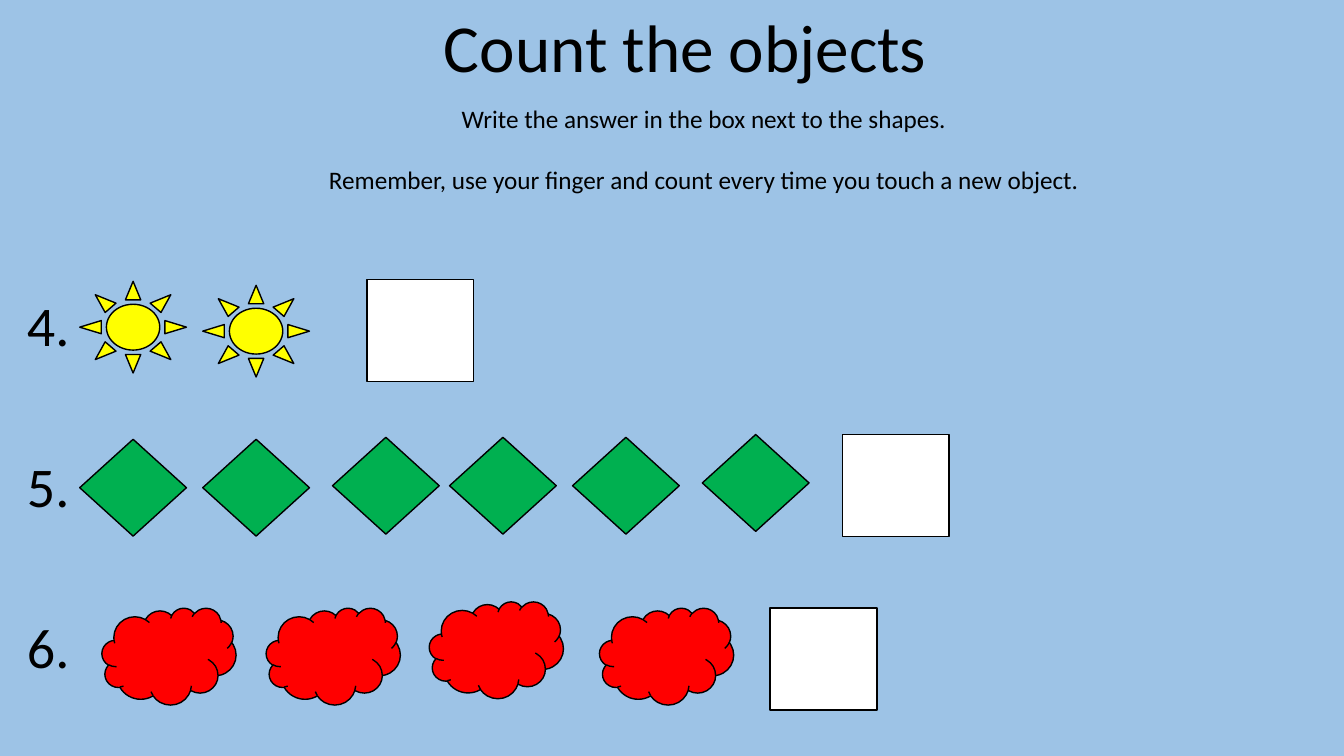
import pptx
import pptx.dml.color
import pptx.enum.shapes
import pptx.enum.text
import pptx.util

Cm = pptx.util.Cm
Pt = pptx.util.Pt
SHAPE = pptx.enum.shapes.MSO_SHAPE
ALIGN = pptx.enum.text.PP_ALIGN

FONT = "Calibri"
BLACK = "000000"
BOX_SIZE = (2.69, 2.57)
FIRST_NUMBER_TOP = 7.19
ROW_STEP = 4.06

ROWS = [
    ("4.", SHAPE.SUN, "FFFF00", (2.69, 2.31),
     [(2.01, 7.09), (5.11, 7.19)], (9.25, 7.04)),
    ("5.", SHAPE.DIAMOND, "00B050", (2.69, 2.44),
     [(2.01, 11.07), (5.11, 11.07), (8.38, 11.02),
      (11.33, 11.02), (14.43, 11.02), (17.7, 10.95)], (21.23, 10.95)),
    ("6.", SHAPE.CLOUD, "FF0000", (3.38, 2.44),
     [(2.57, 15.32), (6.71, 15.32), (10.82, 15.16), (15.11, 15.32)],
     (19.41, 15.32)),
]


def paint(color_format, color):
    """Set a colour format or fill foreground from a hex string."""
    color_format.rgb = pptx.dml.color.RGBColor.from_string(color)


def write(frame, lines, size, align, gap=0):
    """Write one paragraph per line, with a gap in points between them."""
    frame.word_wrap = True
    frame.vertical_anchor = pptx.enum.text.MSO_ANCHOR.TOP
    frame.auto_size = pptx.enum.text.MSO_AUTO_SIZE.SHAPE_TO_FIT_TEXT
    for index, line in enumerate(lines):
        para = frame.paragraphs[0] if index == 0 else frame.add_paragraph()
        para.text = line
        para.alignment = align
        para.font.name = FONT
        para.font.size = Pt(size)
        paint(para.font.color, BLACK)
        if index:
            para.space_before = Pt(gap)


def add_title(page, text):
    """Move and fill the title placeholder."""
    title = page.shapes.title
    title.left, title.top = Cm(3.12), Cm(0)
    title.width, title.height = Cm(28.3), Cm(2.31)
    write(title.text_frame, [text], 48, ALIGN.CENTER)


def add_text(page, place, lines, size, align, gap=0):
    """Add a text box at left, top, width, height in centimetres."""
    box = page.shapes.add_textbox(*map(Cm, place))
    write(box.text_frame, lines, size, align, gap)


def add_figure(page, kind, position, size, color):
    """Add a filled preset shape with a thin black outline."""
    figure = page.shapes.add_shape(kind, *map(Cm, position + size))
    figure.shadow.inherit = False
    figure.fill.solid()
    paint(figure.fill.fore_color, color)
    paint(figure.line.color, BLACK)
    figure.line.width = Pt(1)


def add_row(page, index, number, kind, color, size, positions, box_position):
    """Add a numbered row of objects and its answer box."""
    number_top = FIRST_NUMBER_TOP + index * ROW_STEP
    add_text(page, (0.43, number_top, 2.13, 1.96), [number], 40, ALIGN.LEFT)
    add_figure(page, SHAPE.RECTANGLE, box_position, BOX_SIZE, "FFFFFF")
    for position in positions:
        add_figure(page, kind, position, size, color)


def main():
    """Build the counting worksheet."""
    deck = pptx.Presentation()
    deck.slide_width, deck.slide_height = Cm(33.87), Cm(19.05)
    page = deck.slides.add_slide(deck.slide_layouts.get_by_name("Title Only"))
    page.background.fill.solid()
    paint(page.background.fill.fore_color, "9DC3E6")
    add_title(page, "Count the objects")
    add_text(page, (6.22, 2.49, 23.04, 2.57), [
        "Write the answer in the box next to the shapes.",
        "Remember, use your finger and count every time you touch a new object.",
    ], 18, ALIGN.CENTER, gap=22)
    for index, row in enumerate(ROWS):
        add_row(page, index, *row)
    deck.save("out.pptx")


if __name__ == "__main__":
    main()
